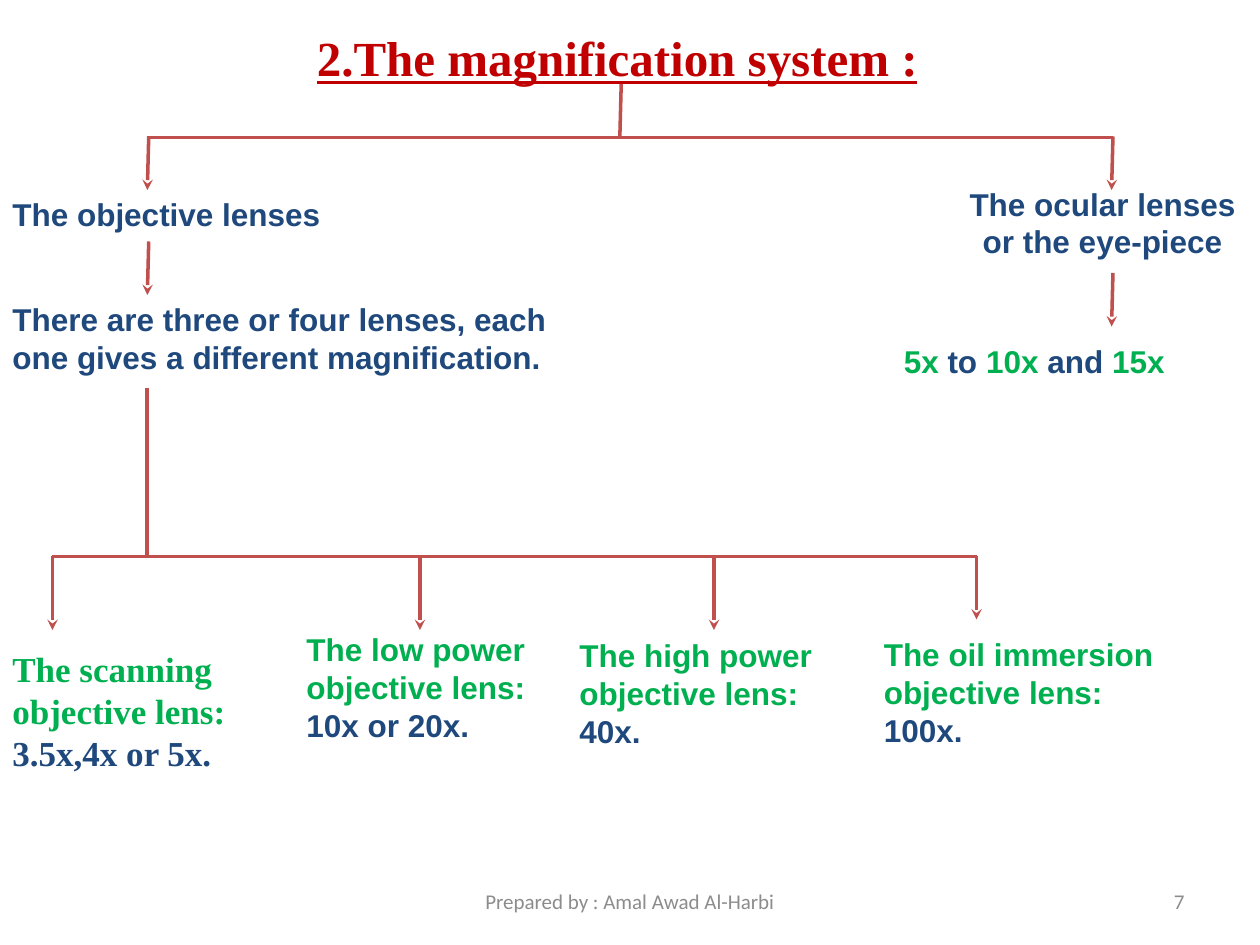
from lxml.etree import SubElement
from pptx import Presentation
from pptx.dml.color import RGBColor
from pptx.enum.shapes import MSO_CONNECTOR as Connector
from pptx.enum.text import MSO_ANCHOR as Anchor, MSO_AUTO_SIZE as AutoSize, PP_ALIGN as Align
from pptx.oxml.ns import qn
from pptx.util import Pt

RED = RGBColor(0xC0, 0x00, 0x00)
BRICK = RGBColor(0xC0, 0x50, 0x4D)
NAVY = RGBColor(0x1F, 0x49, 0x7D)
GREEN = RGBColor(0x00, 0xB0, 0x50)
GRAY = RGBColor(0x8C, 0x8C, 0x8C)

TITLE = {"name": "Times New Roman", "size": Pt(28), "bold": True, "underline": True}
SERIF = {"name": "Times New Roman", "size": Pt(20), "bold": True}
LABEL = {"name": "Arial", "size": Pt(18), "bold": True}
FOOTER = {"name": "Calibri", "size": Pt(12), "bold": False}

deck = Presentation()
deck.slide_width, deck.slide_height = Pt(720), Pt(540)
page = deck.slides.add_slide(deck.slide_layouts[6])


def add_line(start, end, arrow=False):
    line = page.shapes.add_connector(Connector.STRAIGHT, *map(Pt, start + end))
    line.line.color.rgb = BRICK
    line.line.width = Pt(2)
    if arrow:
        SubElement(line.line._get_or_add_ln(), qn("a:tailEnd"), type="stealth")
    SubElement(line._element.spPr, qn("a:effectLst"))


def add_text(place, spans, style, align=Align.LEFT, anchor=Anchor.TOP, wrap=True, fit=AutoSize.SHAPE_TO_FIT_TEXT):
    box = page.shapes.add_textbox(*map(Pt, place))
    frame = box.text_frame
    for key, value in {"word_wrap": wrap, "auto_size": fit, "vertical_anchor": anchor}.items():
        setattr(frame, key, value)
    para = frame.paragraphs[0]
    para.alignment = align
    for words, color in spans:
        span = para.add_run()
        span.text = words
        for key, value in style.items():
            setattr(span.font, key, value)
        span.font.color.rgb = color


add_text((174, 12.4, 361.5, 41), [("2.The magnification system :", RED)], TITLE, wrap=False)

for start, end in [
    ((355, 48), (354.2, 78.5)),
    ((636, 78.5), (84, 78.5)),
    ((558, 318), (30, 318)),
    ((84, 222), (84, 318)),
]:
    add_line(start, end)

for x, y in [(85, 78), (636, 78), (85, 138), (636, 156)]:
    add_line((x, y), (x - 0.8, y + 30.6), arrow=True)

for x, tip in [(30, 360), (240, 360), (408, 360), (558, 354)]:
    add_line((x, 318), (x, tip), arrow=True)

add_text((0, 108, 192, 29), [("The objective lenses", NAVY)], LABEL, wrap=False)
add_text((546, 102, 168, 51), [("The ocular lenses or the eye-piece", NAVY)], LABEL, Align.CENTER)
add_text(
    (0, 168, 324, 51),
    [("There are three or four lenses, each one gives a different magnification.", NAVY)],
    LABEL,
)
add_text(
    (468, 192, 246, 29),
    [("5x", GREEN), (" to ", NAVY), ("10x", GREEN), (" and ", NAVY), ("15x", GREEN)],
    LABEL,
    Align.CENTER,
)

for place, lens, power, style, anchor in [
    ((0, 366, 163.5, 80), "scanning", "3.5x,4x or 5x.", SERIF, Anchor.MIDDLE),
    ((168, 356.4, 156, 72.7), "low power", "10x or 20x.", LABEL, Anchor.TOP),
    ((324, 360, 162, 72.7), "high power", "40x.", LABEL, Anchor.TOP),
    ((498, 359.3, 186, 72.7), "oil immersion", "100x.", LABEL, Anchor.TOP),
]:
    add_text(place, [(f"The {lens} objective lens: ", GREEN), (power, NAVY)], style, anchor=anchor)

for place, words, align in [
    ((246, 500.5, 228, 28.75), "Prepared by : Amal Awad Al-Harbi", Align.CENTER),
    ((516, 500.5, 168, 28.75), "7", Align.RIGHT),
]:
    add_text(place, [(words, GRAY)], FOOTER, align, Anchor.MIDDLE, fit=AutoSize.NONE)

deck.save("out.pptx")
